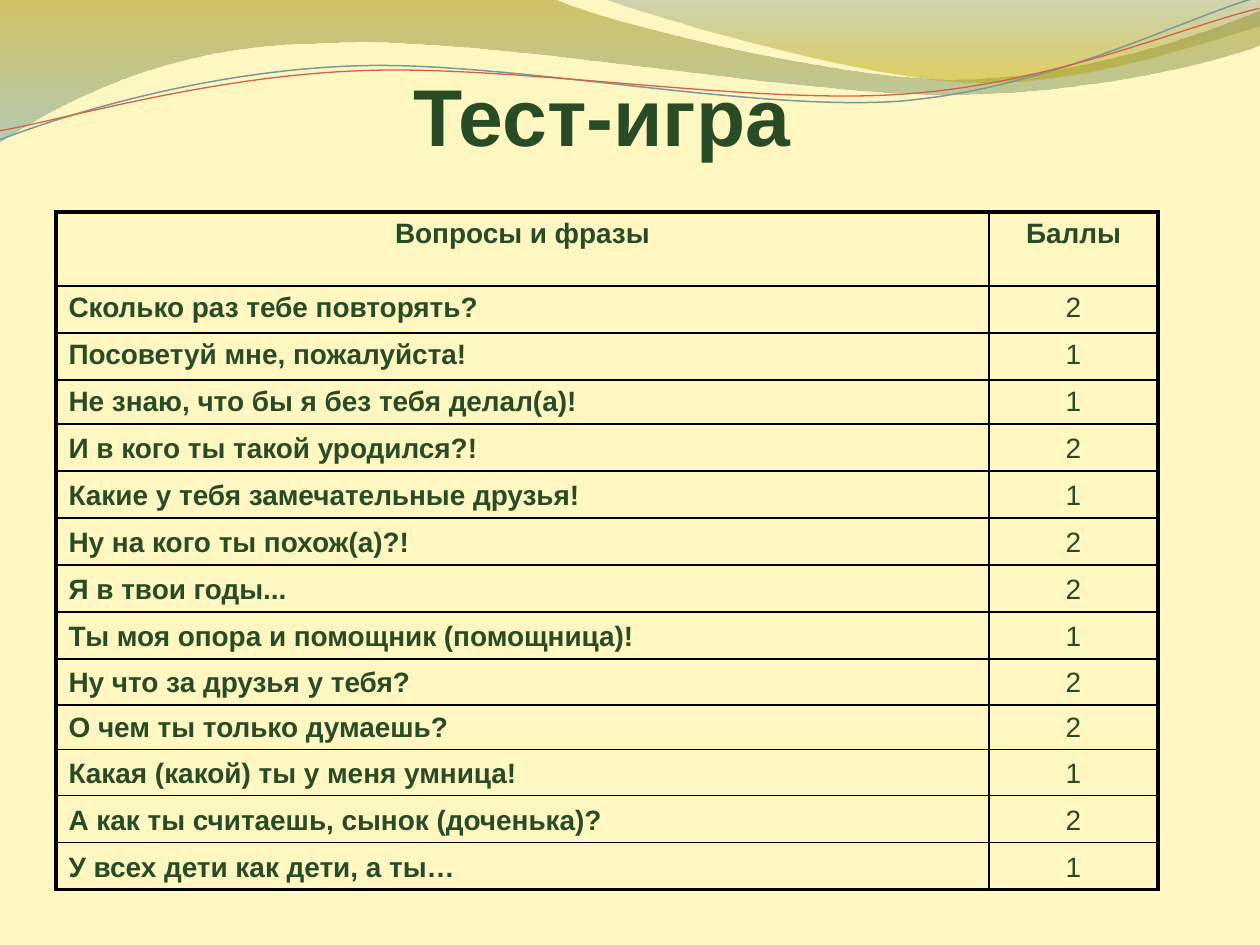
from dataclasses import dataclass
from typing import Optional

from lxml.etree import SubElement
from pptx import Presentation
from pptx.dml.color import RGBColor
from pptx.enum.text import MSO_ANCHOR, MSO_AUTO_SIZE, PP_ALIGN
from pptx.oxml.ns import qn
from pptx.util import Emu, Pt

PX_PER_INCH = 126
CREAM = RGBColor(0xFF, 0xF7, 0xC1)
GREEN = RGBColor(0x29, 0x4B, 0x25)
BLACK = RGBColor(0x00, 0x00, 0x00)
OLIVE = RGBColor(0x97, 0x85, 0x00)
TEAL = RGBColor(0x77, 0xA5, 0xA6)
SLATE = RGBColor(0x64, 0x84, 0x84)
GOLD = RGBColor(0xB4, 0x9F, 0x00)
BLUE_GREY = RGBColor(0x7C, 0x99, 0x9A)
RED = RGBColor(0xD1, 0x63, 0x49)
FONT = "Arial"
THICK, THIN = 2.25, 1
LINE_TILT = 357.3


@dataclass(frozen=True)
class Stop:
    position: float
    color: RGBColor
    opacity: int


@dataclass(frozen=True)
class Wave:
    """An outline whose segments hold one point (line) or three (curve)."""
    start: tuple
    segments: tuple
    stops: tuple = ()
    line_color: Optional[RGBColor] = None
    line_width: float = 0


@dataclass(frozen=True)
class Question:
    phrase: str
    score: str
    height: int
    anchor: MSO_ANCHOR = MSO_ANCHOR.BOTTOM


WAVES = (
    Wave((0, -1), (
        ((554, -1),),
        ((600, 21), (837, 79), (955, 79)),
        ((1074, 79), (1207, 33), (1260, 11)),
        ((1261, 45),),
        ((1239, 55), (1096, 96), (940, 94)),
        ((784, 94), (481, 35), (324, 43)),
        ((163, 44), (58, 105), (-1, 142)),
        ((0, -1),),
    ), stops=(Stop(0, OLIVE, 45), Stop(1, TEAL, 55))),
    Wave((604, -1), (
        ((641, 14), (859, 78), (969, 82)),
        ((1079, 87), (1211, 40), (1260, 26)),
        ((1260, 0),),
        ((604, -1),),
    ), stops=(Stop(0, SLATE, 30), Stop(0.8, GOLD, 45))),
    Wave((-2, 110), (
        ((58, 90), (199, 52), (350, 53)),
        ((499, 53), (745, 117), (896, 114)),
        ((1049, 109), (1184, 45), (1260, 27)),
    ), line_color=BLUE_GREY, line_width=0.85),
    Wave((-2, 101), (
        ((57, 94), (207, 57), (357, 58)),
        ((509, 58), (750, 111), (902, 107)),
        ((1052, 104), (1187, 52), (1262, 38)),
    ), line_color=RED, line_width=0.75),
)

HEADER = Question("Вопросы и фразы", "Баллы", 74, MSO_ANCHOR.TOP)
QUESTIONS = (
    Question("Сколько раз тебе повторять?", "2", 47, MSO_ANCHOR.TOP),
    Question("Посоветуй мне, пожалуйста!", "1", 47, MSO_ANCHOR.TOP),
    Question("Не знаю, что бы я без тебя делал(а)!", "1", 44, MSO_ANCHOR.TOP),
    Question("И в кого ты такой уродился?!", "2", 47),
    Question("Какие у тебя замечательные друзья!", "1", 47),
    Question("Ну на кого ты похож(а)?!", "2", 47),
    Question("Я в твои годы...", "2", 47),
    Question("Ты моя опора и помощник (помощница)!", "1", 47),
    Question("Ну что за друзья у тебя?", "2", 46),
    Question("О чем ты только думаешь?", "2", 45),
    Question("Какая (какой) ты у меня умница!", "1", 46),
    Question("А как ты считаешь, сынок (доченька)?", "2", 47),
    Question("У всех дети как дети, а ты…", "1", 47),
)
COLUMN_WIDTHS = (933, 169)


def px(length: int) -> Emu:
    """Turn pixels into EMU."""
    return Emu(round(length * 914400 / PX_PER_INCH))


def bend(band, segments: tuple) -> None:
    """Merge each triple of straight steps into one Bézier curve."""
    steps = band.element.iter(qn("a:lnTo"))
    steps = iter(list(steps))
    for segment in segments:
        group = [next(steps) for _ in segment]
        if len(group) == 1:
            continue
        outline = group[0].getparent()
        curve = SubElement(outline, qn("a:cubicBezTo"))
        group[0].addprevious(curve)
        for step in group:
            curve.append(step[0])
            outline.remove(step)


def draw_wave(slide, wave: Wave) -> None:
    """Draw a gradient band or a thin tilted curve."""
    points = [(px(x), px(y)) for segment in wave.segments for x, y in segment]
    builder = slide.shapes.build_freeform(*map(px, wave.start))
    builder.add_line_segments(points, close=bool(wave.stops))
    band = builder.convert_to_shape()
    bend(band, wave.segments)
    band.shadow.inherit = False
    if not wave.stops:
        band.rotation = LINE_TILT
        band.fill.background()
        band.line.color.rgb = wave.line_color
        band.line.width = Pt(wave.line_width)
        return
    band.line.fill.background()
    band.fill.gradient()
    band.fill.gradient_angle = 270
    for gradient_stop, stop in zip(band.fill.gradient_stops, wave.stops):
        gradient_stop.position = stop.position
        gradient_stop.color.rgb = stop.color
    colors = band.element.spPr.iter(qn("a:srgbClr"))
    for color, stop in zip(list(colors), wave.stops):
        SubElement(color, qn("a:alpha"), val=str(stop.opacity * 1000))


def style_text(paragraph, size: int, bold: bool, align: PP_ALIGN) -> None:
    """Format a paragraph and its runs."""
    paragraph.alignment = align
    for run in paragraph.runs:
        run.font.name = FONT
        run.font.size = Pt(size)
        run.font.bold = bold
        run.font.color.rgb = GREEN


def draw_title(slide, text: str) -> None:
    """Place the title above the waves."""
    title = slide.shapes.title
    title.left, title.top, title.width, title.height = map(px, (46, 85, 1134, 78))
    frame = title.text_frame
    frame.text = text
    frame.word_wrap = True
    frame.auto_size = MSO_AUTO_SIZE.NONE
    frame.vertical_anchor = MSO_ANCHOR.BOTTOM
    frame.margin_left = frame.margin_right = frame.margin_bottom = 0
    frame.margin_top = px(6)
    style_text(frame.paragraphs[0], 46, True, PP_ALIGN.CENTER)
    title.element.getparent().append(title.element)


def set_borders(cell, widths: dict) -> None:
    """Give a cell solid black borders of the given point widths."""
    properties = cell._tc.get_or_add_tcPr()
    for position, (side, width) in enumerate(widths.items()):
        border = SubElement(properties, qn(f"a:ln{side}"), w=str(Pt(width)))
        fill = SubElement(border, qn("a:solidFill"))
        SubElement(fill, qn("a:srgbClr"), val=str(BLACK))
        properties.insert(position, border)


def draw_table(slide, rows: tuple) -> None:
    """Draw the questions with their scores inside a thick frame."""
    last_row, last_column = len(rows) - 1, len(COLUMN_WIDTHS) - 1
    table = slide.shapes.add_table(
        len(rows), len(COLUMN_WIDTHS), px(56), px(212),
        px(sum(COLUMN_WIDTHS)), px(sum(row.height for row in rows))).table
    table.first_row = table.horz_banding = False
    for column, width in zip(table.columns, COLUMN_WIDTHS):
        column.width = px(width)
    for r, row in enumerate(rows):
        table.rows[r].height = px(row.height)
        for c, text in enumerate((row.phrase, row.score)):
            cell = table.cell(r, c)
            cell.text_frame.text = text
            cell.vertical_anchor = row.anchor
            cell.fill.background()
            is_phrase = r > 0 and c == 0
            style_text(cell.text_frame.paragraphs[0], 16, r == 0 or c == 0,
                       PP_ALIGN.LEFT if is_phrase else PP_ALIGN.CENTER)
            set_borders(cell, {
                "L": THICK if c == 0 else THIN,
                "R": THICK if c == last_column else THIN,
                "T": THICK if r == 0 else THIN,
                "B": THICK if r == last_row else THIN,
            })


def main() -> None:
    """Build the slide and save it."""
    presentation = Presentation()
    presentation.slide_width, presentation.slide_height = px(1260), px(945)
    slide = presentation.slides.add_slide(presentation.slide_layouts[5])
    slide.background.fill.solid()
    slide.background.fill.fore_color.rgb = CREAM
    for wave in WAVES:
        draw_wave(slide, wave)
    draw_title(slide, "Тест-игра ")
    draw_table(slide, (HEADER, *QUESTIONS))
    presentation.save("out.pptx")


if __name__ == "__main__":
    main()
